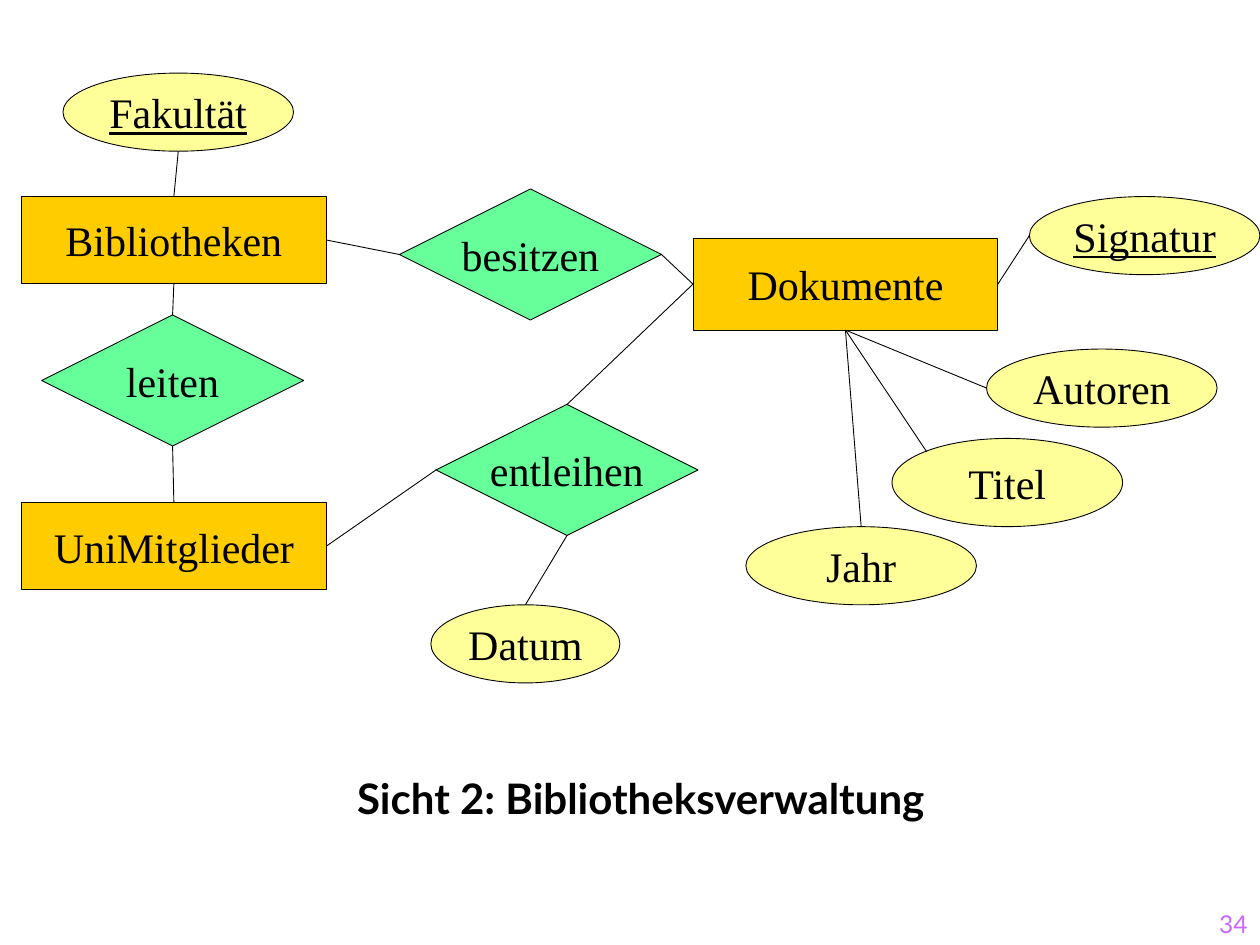
"""Entity-relationship diagram of the library administration view."""
from typing import NamedTuple

from lxml.etree import SubElement
from pptx import Presentation
from pptx.dml.color import RGBColor
from pptx.enum.shapes import MSO_CONNECTOR, MSO_SHAPE
from pptx.enum.text import MSO_ANCHOR, PP_ALIGN
from pptx.oxml.ns import qn
from pptx.util import Inches, Pt

COLORS = {
    "entity": "FFCC00",
    "relation": "66FF99",
    "attribute": "FFFF99",
    "ink": "000000",
    "number": "CC66FF",
}
GEOMETRY = {
    "entity": MSO_SHAPE.RECTANGLE,
    "relation": MSO_SHAPE.DIAMOND,
    "attribute": MSO_SHAPE.OVAL,
}


class Node(NamedTuple):
    kind: str
    name: str
    x: float
    y: float
    w: float
    h: float
    key: bool = False


class Side(NamedTuple):
    fx: float
    fy: float
    site: int


class Link(NamedTuple):
    start: str
    start_side: str
    end: str
    end_side: str


SIDES = {
    "top": Side(0.5, 0, 0),
    "left": Side(0, 0.5, 1),
    "bottom": Side(0.5, 1, 2),
    "right": Side(1, 0.5, 3),
    "top left": Side(0.15, 0.15, 1),
}

NODES = [
    Node("attribute", "Signatur", 8.17, 1.56, 1.83, 0.62, True),
    Node("entity", "Bibliotheken", 0.17, 1.56, 2.42, 0.69),
    Node("entity", "UniMitglieder", 0.17, 3.99, 2.42, 0.69),
    Node("relation", "besitzen", 3.17, 1.5, 2.08, 1.04),
    Node("entity", "Dokumente", 5.5, 1.89, 2.42, 0.73),
    Node("attribute", "Autoren", 7.83, 2.77, 1.83, 0.62),
    Node("attribute", "Titel", 7.08, 3.48, 1.83, 0.7),
    Node("attribute", "Jahr", 5.92, 4.18, 1.83, 0.62),
    Node("relation", "entleihen", 3.46, 3.21, 2.08, 1.04),
    Node("relation", "leiten", 0.33, 2.5, 2.08, 1.04),
    Node("attribute", "Datum", 3.42, 4.8, 1.5, 0.62),
    Node("attribute", "Fakultät", 0.5, 0.58, 1.83, 0.62, True),
]

LINKS = [
    Link("Fakultät", "bottom", "Bibliotheken", "top"),
    Link("Bibliotheken", "bottom", "leiten", "top"),
    Link("leiten", "bottom", "UniMitglieder", "top"),
    Link("Bibliotheken", "right", "besitzen", "left"),
    Link("besitzen", "right", "Dokumente", "left"),
    Link("UniMitglieder", "right", "entleihen", "left"),
    Link("entleihen", "top", "Dokumente", "left"),
    Link("entleihen", "bottom", "Datum", "top"),
    Link("Dokumente", "right", "Signatur", "left"),
    Link("Dokumente", "bottom", "Autoren", "left"),
    Link("Dokumente", "bottom", "Titel", "top left"),
    Link("Dokumente", "bottom", "Jahr", "top"),
]


def rgb(name: str) -> RGBColor:
    return RGBColor.from_string(COLORS[name])


def write(tf, text: str, font: str, size: int, color: str, align, bold=False, underline=False) -> None:
    p = tf.paragraphs[0]
    p.alignment = align
    r = p.add_run()
    r.text = text
    r.font.name = font
    r.font.size = Pt(size)
    r.font.bold = bold
    r.font.underline = underline
    r.font.color.rgb = rgb(color)


def add_node(s, node: Node):
    box = (Inches(v) for v in (node.x, node.y, node.w, node.h))
    sp = s.shapes.add_shape(GEOMETRY[node.kind], *box)
    sp.shadow.inherit = False
    sp.fill.solid()
    sp.fill.fore_color.rgb = rgb(node.kind)
    sp.line.color.rgb = rgb("ink")
    sp.line.width = Pt(0.5)
    tf = sp.text_frame
    tf.word_wrap = False
    tf.vertical_anchor = MSO_ANCHOR.MIDDLE
    write(tf, node.name, "Times New Roman", 24, "ink", PP_ALIGN.CENTER, underline=node.key)
    return sp


def point(sp, side: Side) -> tuple[int, int]:
    return round(sp.left + side.fx * sp.width), round(sp.top + side.fy * sp.height)


def can_join(sp, side: Side) -> bool:
    return sp.auto_shape_type != MSO_SHAPE.OVAL or side.site == 0


def add_link(s, shapes: dict, link: Link) -> None:
    start, end = shapes[link.start], shapes[link.end]
    a, b = SIDES[link.start_side], SIDES[link.end_side]
    cxn = s.shapes.add_connector(MSO_CONNECTOR.STRAIGHT, *point(start, a), *point(end, b))
    cxn.line.color.rgb = rgb("ink")
    cxn.line.width = Pt(0.5)
    SubElement(cxn._element.spPr, qn("a:effectLst"))
    if can_join(start, a):
        cxn.begin_connect(start, a.site)
    if can_join(end, b):
        cxn.end_connect(end, b.site)


def add_text(s, x: float, y: float, w: float, h: float, anchor):
    tf = s.shapes.add_textbox(Inches(x), Inches(y), Inches(w), Inches(h)).text_frame
    tf.word_wrap = True
    tf.vertical_anchor = anchor
    return tf


def main() -> None:
    prs = Presentation()
    prs.slide_width, prs.slide_height = Inches(10), Inches(7.5)
    s = prs.slides.add_slide(prs.slide_layouts[6])
    number = add_text(s, 7.92, 7, 2.08, 0.5, MSO_ANCHOR.BOTTOM)
    write(number, "34", "Lato", 14, "number", PP_ALIGN.RIGHT)
    shapes = {node.name: add_node(s, node) for node in NODES}
    for link in LINKS:
        add_link(s, shapes, link)
    caption = add_text(s, 0.5, 6.08, 9.17, 0.5, MSO_ANCHOR.TOP)
    write(caption, "Sicht 2: Bibliotheksverwaltung", "Lato", 24, "ink", PP_ALIGN.CENTER, bold=True)
    prs.save("out.pptx")


if __name__ == "__main__":
    main()
